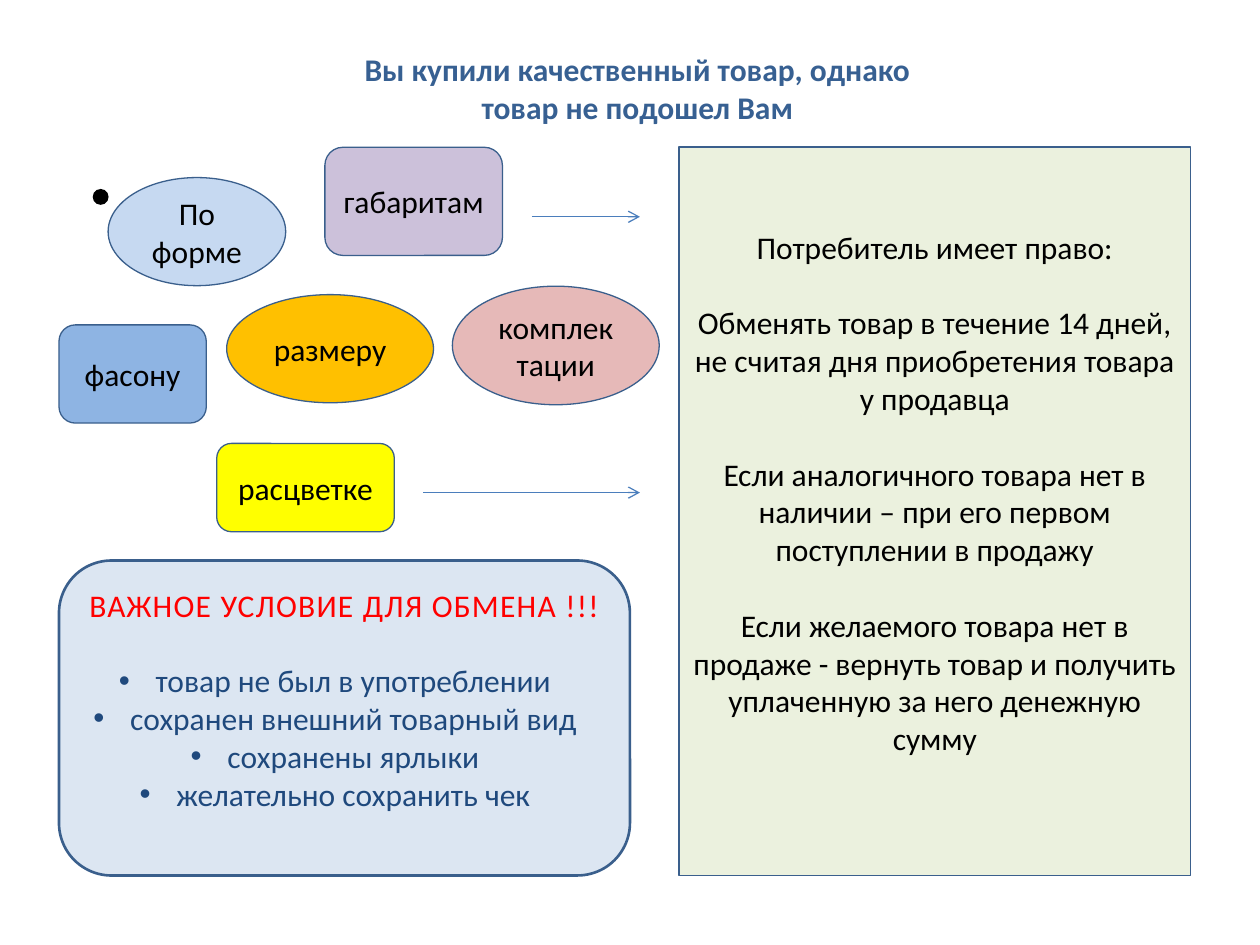
from dataclasses import dataclass

from lxml.etree import SubElement
from pptx import Presentation
from pptx.dml.color import RGBColor
from pptx.enum.shapes import MSO_CONNECTOR, MSO_SHAPE
from pptx.enum.text import MSO_ANCHOR, PP_ALIGN
from pptx.oxml.ns import qn
from pptx.util import Cm, Pt


@dataclass(frozen=True)
class Theme:
    font: str = "Calibri"
    size: int = 18
    line_gap: float = 21.6
    text: str = "000000"
    title: str = "376092"
    outline: str = "3A5F8C"
    arrow: str = "4B7EBC"
    warning: str = "FF0000"
    condition: str = "1F497D"
    shape_fill: str = "C6D9F1"
    size_fill: str = "FFC000"
    kit_fill: str = "E6B9B8"
    style_fill: str = "8EB4E3"
    bulk_fill: str = "CCC1DA"
    colour_fill: str = "FFFF00"
    rights_fill: str = "EBF1DE"
    conditions_fill: str = "DCE6F2"


def apply(target, values):
    for name, value in values.items():
        setattr(target, name, value)


class SlideBuilder:
    def __init__(self, slide, theme):
        self.slide = slide
        self.theme = theme

    def format_text(self, paragraph, color, bold=False, gap=0):
        apply(paragraph, {"alignment": PP_ALIGN.CENTER,
                          "space_before": Pt(gap), "space_after": Pt(0)})
        apply(paragraph.font, {"name": self.theme.font,
                               "size": Pt(self.theme.size), "bold": bold})
        paragraph.font.color.rgb = RGBColor.from_string(color)

    def title(self, text, left, top, width, height):
        heading = self.slide.shapes.title
        apply(heading, {"left": Cm(left), "top": Cm(top),
                        "width": Cm(width), "height": Cm(height)})
        apply(heading.text_frame, {"text": text, "word_wrap": True,
                                   "vertical_anchor": MSO_ANCHOR.MIDDLE})
        self.format_text(heading.text_frame.paragraphs[0], self.theme.title, bold=True)

    def shape(self, kind, fill, left, top, width, height, line_width=0.75):
        block = self.slide.shapes.add_shape(kind, Cm(left), Cm(top), Cm(width), Cm(height))
        block.shadow.inherit = False
        block.fill.solid()
        block.fill.fore_color.rgb = RGBColor.from_string(fill)
        block.line.color.rgb = RGBColor.from_string(self.theme.outline)
        block.line.width = Pt(line_width)
        apply(block.text_frame, {"word_wrap": True, "vertical_anchor": MSO_ANCHOR.MIDDLE})
        return block

    def reason(self, text, kind, fill, *box):
        paragraph = self.shape(kind, fill, *box).text_frame.paragraphs[0]
        paragraph.add_run().text = text
        self.format_text(paragraph, self.theme.text)

    def marker(self, left, top, diameter):
        dot = self.shape(MSO_SHAPE.OVAL, self.theme.text, left, top, diameter, diameter)
        dot.line.fill.background()

    def rights(self, statements, *box):
        frame = self.shape(MSO_SHAPE.RECTANGLE, self.theme.rights_fill, *box, line_width=1).text_frame
        frame.margin_bottom = Cm(0.89)
        for index, statement in enumerate(statements):
            paragraph = frame.add_paragraph() if index else frame.paragraphs[0]
            paragraph.add_run().text = statement
            self.format_text(paragraph, self.theme.text, gap=self.theme.line_gap if index else 0)

    def conditions(self, warning, requirements, *box):
        frame = self.shape(MSO_SHAPE.ROUNDED_RECTANGLE, self.theme.conditions_fill,
                           *box, line_width=1.5).text_frame
        frame.margin_bottom = Cm(0.89)
        heading = frame.paragraphs[0]
        run = heading.add_run()
        run.text = warning
        run.font.size = Pt(self.theme.size)
        run.font._element.set("spc", "70")
        self.format_text(heading, self.theme.warning)
        for index, requirement in enumerate(requirements):
            paragraph = frame.add_paragraph()
            paragraph.add_run().text = requirement
            self.bullet(paragraph)
            self.format_text(paragraph, self.theme.condition,
                             gap=0 if index else self.theme.line_gap)

    def bullet(self, paragraph):
        properties = paragraph._p.get_or_add_pPr()
        indents = {"marL": Cm(0.74), "marR": Cm(0.38), "indent": -Cm(0.74)}
        for name, value in indents.items():
            properties.set(name, str(int(value)))
        SubElement(properties, qn("a:buFont")).set("typeface", "Arial")
        SubElement(properties, qn("a:buChar")).set("char", "•")

    def arrow(self, start, end, level):
        pointer = self.slide.shapes.add_connector(
            MSO_CONNECTOR.STRAIGHT, Cm(start), Cm(level), Cm(end), Cm(level))
        pointer.line.color.rgb = RGBColor.from_string(self.theme.arrow)
        pointer.line.width = Pt(0.75)
        SubElement(pointer.line._get_or_add_ln(), qn("a:tailEnd")).set("type", "arrow")
        SubElement(pointer._element.spPr, qn("a:effectLst"))


def main():
    theme = Theme()
    deck = Presentation()
    apply(deck, {"slide_width": Cm(25.4), "slide_height": Cm(19.05)})
    builder = SlideBuilder(deck.slides.add_slide(deck.slide_layouts[5]), theme)

    builder.title("Вы купили качественный товар, однако\vтовар не подошел Вам",
                  1.57, 0.76, 22.56, 2.01)
    builder.marker(1.87, 3.81, 0.32)

    oval, rounded = MSO_SHAPE.OVAL, MSO_SHAPE.ROUNDED_RECTANGLE
    reasons = [
        ("размеру", oval, theme.size_fill, 4.57, 5.94, 4.17, 2.18),
        ("По форме", oval, theme.shape_fill, 2.18, 3.58, 3.58, 2.18),
        ("комплектации", oval, theme.kit_fill, 9.12, 5.77, 4.17, 2.39),
        ("фасону", rounded, theme.style_fill, 1.19, 6.55, 2.97, 1.98),
        ("габаритам", rounded, theme.bulk_fill, 6.55, 2.97, 3.58, 2.18),
        ("расцветке", rounded, theme.colour_fill, 4.37, 8.94, 3.58, 1.78),
    ]
    for reason in reasons:
        builder.reason(*reason)

    builder.rights([
        "Потребитель имеет право:",
        "Обменять товар в течение 14 дней, не считая дня приобретения товара у продавца",
        "Если аналогичного товара нет в наличии – при его первом поступлении в продажу",
        "Если желаемого товара нет в продаже - вернуть товар и получить уплаченную за него денежную сумму",
    ], 13.69, 2.97, 10.31, 14.68)

    for start, level in ((10.72, 4.37), (8.53, 9.93)):
        builder.arrow(start, 12.9, level)

    builder.conditions("ВАЖНОЕ УСЛОВИЕ ДЛЯ ОБМЕНА !!!", [
        "товар не был в употреблении",
        "сохранен внешний товарный вид",
        "сохранены ярлыки",
        "желательно сохранить чек",
    ], 1.19, 11.3, 11.51, 6.35)

    deck.save("out.pptx")


if __name__ == "__main__":
    main()
